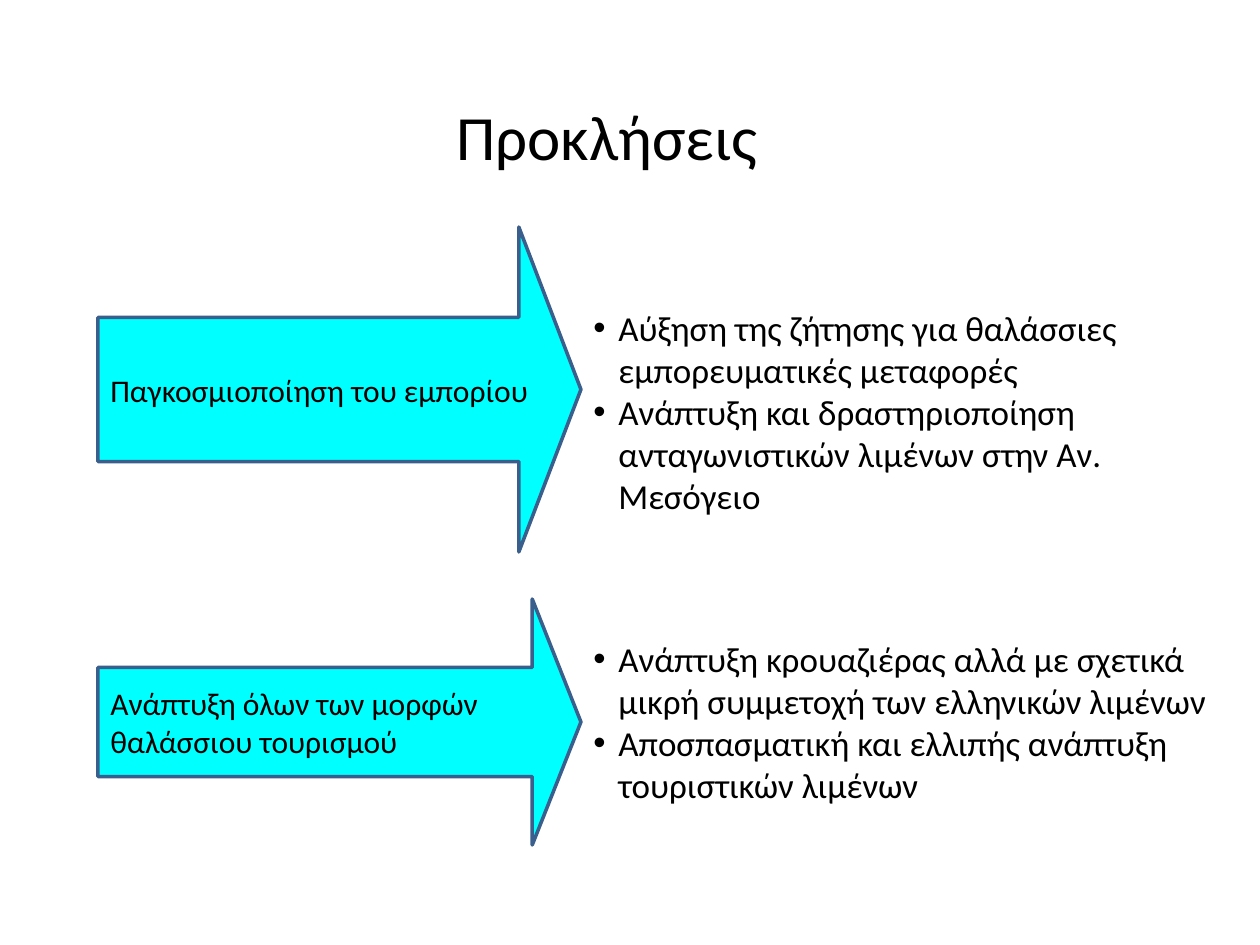
"""Build the slide on challenges for Greek ports: two arrows with their effects."""
from lxml.etree import SubElement
from pptx import Presentation
from pptx.dml.color import RGBColor
from pptx.enum.shapes import MSO_SHAPE
from pptx.enum.text import MSO_ANCHOR, MSO_AUTO_SIZE, PP_ALIGN
from pptx.oxml.ns import qn
from pptx.util import Pt

TITLE = "Προκλήσεις"
CHALLENGES = [
    {
        "cause": "Παγκοσμιοποίηση του εμπορίου",
        "effects": [
            "Αύξηση της ζήτησης για θαλάσσιες εμπορευματικές μεταφορές",
            "Ανάπτυξη και δραστηριοποίηση ανταγωνιστικών λιμένων στην Αν. Μεσόγειο",
        ],
        "arrow_span": (227, 325),
        "effects_span": (300, 262),
        "head": 0.191,
    },
    {
        "cause": "Ανάπτυξη όλων των μορφών θαλάσσιου τουρισμού",
        "effects": [
            "Ανάπτυξη κρουαζιέρας αλλά με σχετικά μικρή συμμετοχή των ελληνικών λιμένων",
            "Αποσπασματική και ελλιπής ανάπτυξη τουριστικών λιμένων",
        ],
        "arrow_span": (599, 246),
        "effects_span": (631, 266),
        "head": 0.198,
    },
]
COLORS = {"text": "000000", "arrow": "00FFFF", "outline": "3A5F8C"}
PX = 914400 // 126
ARROW_LEFT, ARROW_WIDTH = 98, 483
EFFECTS_LEFT, EFFECTS_WIDTH = ARROW_LEFT + ARROW_WIDTH, 640
SHAFT = 0.444
INDENT = 25
FRAME = {"word_wrap": True, "auto_size": MSO_AUTO_SIZE.NONE}


def px(*lengths):
    return [length * PX for length in lengths]


def rgb(name):
    return RGBColor.from_string(COLORS[name])


def apply(target, formats):
    for attribute, value in formats.items():
        setattr(target, attribute, value)


def write(frame, lines, size, align=PP_ALIGN.LEFT, bullets=False, **frame_format):
    apply(frame, {**FRAME, **frame_format})
    for number, line in enumerate(lines):
        paragraph = frame.add_paragraph() if number else frame.paragraphs[0]
        paragraph.text = line
        if bullets:
            properties = paragraph._p.get_or_add_pPr()
            properties.set("marL", str(INDENT * PX))
            properties.set("indent", str(-INDENT * PX))
            SubElement(properties, qn("a:buFont"), typeface="Arial")
            SubElement(properties, qn("a:buChar"), char="•")
        apply(paragraph, {"alignment": align, "space_before": Pt(0)})
        apply(paragraph.font, {"name": "Calibri", "size": Pt(size)})
        paragraph.font.color.rgb = rgb("text")


def add_challenge(slide, challenge):
    top, height = challenge["arrow_span"]
    arrow = slide.shapes.add_shape(
        MSO_SHAPE.RIGHT_ARROW, *px(ARROW_LEFT, top, ARROW_WIDTH, height))
    arrow.adjustments[0] = SHAFT
    arrow.adjustments[1] = challenge["head"]
    arrow.shadow.inherit = False
    arrow.fill.solid()
    arrow.fill.fore_color.rgb = rgb("arrow")
    arrow.line.color.rgb = rgb("outline")
    arrow.line.width = Pt(2)
    write(arrow.text_frame, [challenge["cause"]], 18,
          vertical_anchor=MSO_ANCHOR.MIDDLE)

    top, height = challenge["effects_span"]
    effects = slide.shapes.add_textbox(
        *px(EFFECTS_LEFT, top, EFFECTS_WIDTH, height))
    write(effects.text_frame, challenge["effects"], 20, bullets=True,
          vertical_anchor=MSO_ANCHOR.TOP)


def main():
    presentation = Presentation()
    apply(presentation, dict(zip(("slide_width", "slide_height"), px(1260, 945))))
    slide = presentation.slides.add_slide(presentation.slide_layouts[5])
    title = slide.shapes.title
    apply(title, dict(zip(("left", "top", "width", "height"), px(40, 64, 1134, 91))))
    write(title.text_frame, [TITLE], 36, PP_ALIGN.CENTER,
          vertical_anchor=MSO_ANCHOR.TOP, margin_top=34 * PX)
    for challenge in CHALLENGES:
        add_challenge(slide, challenge)
    presentation.save("out.pptx")


if __name__ == "__main__":
    main()
